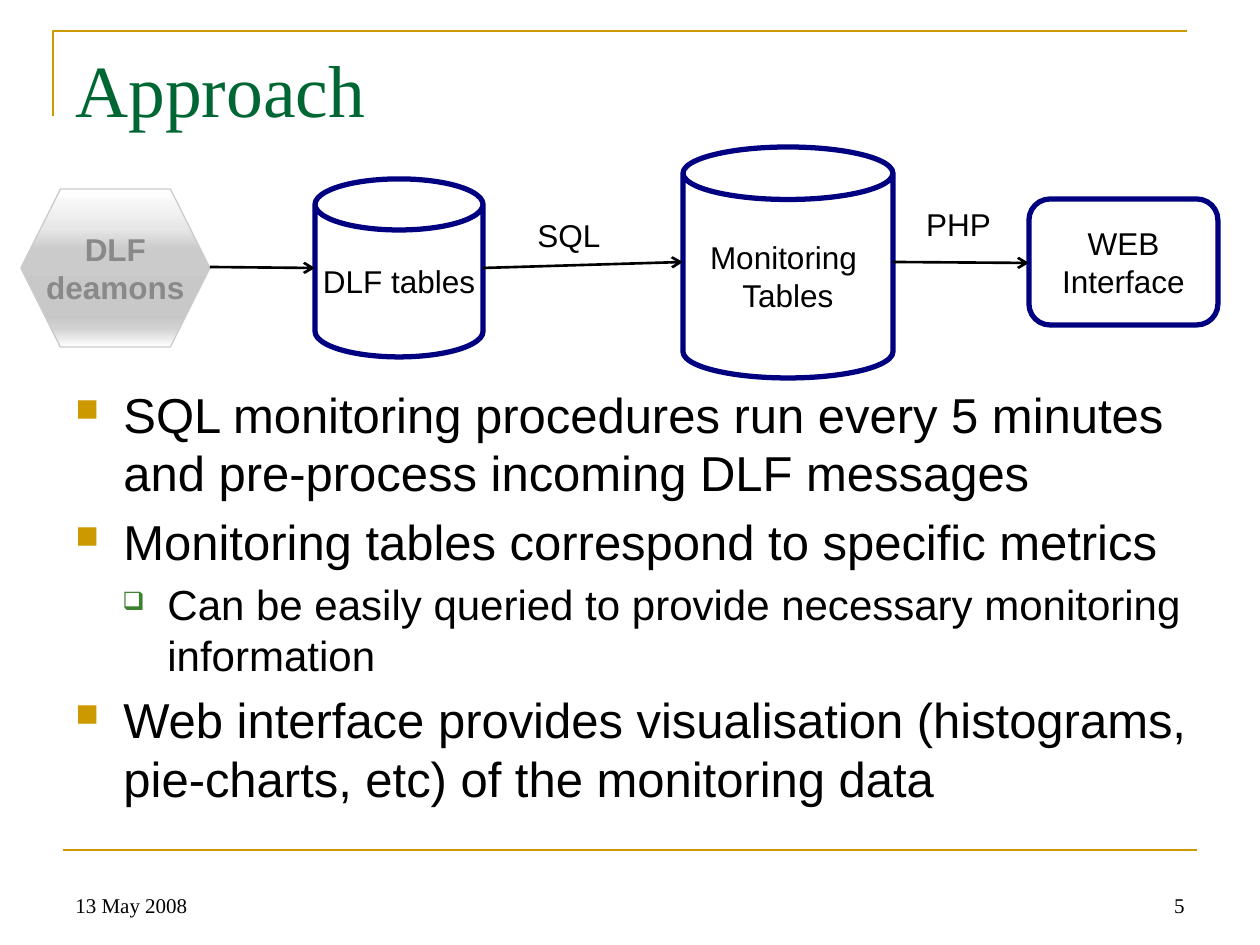
from lxml import etree
from pptx import Presentation
from pptx.dml.color import RGBColor
from pptx.enum.shapes import MSO_CONNECTOR, MSO_SHAPE
from pptx.enum.text import MSO_ANCHOR, PP_ALIGN
from pptx.oxml.ns import qn
from pptx.util import Pt

LEFT, CENTER, RIGHT = PP_ALIGN.LEFT, PP_ALIGN.CENTER, PP_ALIGN.RIGHT
TOP, MIDDLE, BOTTOM = MSO_ANCHOR.TOP, MSO_ANCHOR.MIDDLE, MSO_ANCHOR.BOTTOM
CAN, HEXAGON, ROUNDED = MSO_SHAPE.CAN, MSO_SHAPE.HEXAGON, MSO_SHAPE.ROUNDED_RECTANGLE
STRAIGHT = MSO_CONNECTOR.STRAIGHT

SCALE = 914400 / 126
GOLD, GREEN, NAVY, BLACK, SILVER = "CC9900", "006633", "000080", "000000", "CCCCCC"
SANS, SERIF = "Arial", "Times New Roman"
LABEL = {"size": Pt(18), "name": SANS}
FOOTER = {"size": Pt(12), "name": SERIF}
LEVELS = [
    {"size": 28, "left": 48, "hang": 48, "mark": "■", "color": GOLD, "percent": 65},
    {"size": 24, "left": 92, "hang": 45, "mark": "❑", "color": "3B812F", "percent": 60},
]
STEEL = [(0, "FFFFFF"), (25, "E7E7E7"), (38, "CBCBCB"), (55, "C8C8C8"),
         (80, "C6C6C6"), (88, "D1D1D1"), (100, "FFFFFF")]
BULLETS = [
    (0, "SQL monitoring procedures run every 5 minutes and pre-process incoming DLF messages"),
    (0, "Monitoring tables correspond to specific metrics"),
    (1, "Can be easily queried to provide necessary monitoring information"),
    (0, "Web interface provides visualisation (histograms, pie-charts, etc) of the monitoring data"),
]


def px(value):
    return round(value * SCALE)


def rgb(value):
    return RGBColor.from_string(value)


def child(parent, tag, **attributes):
    return etree.SubElement(parent, qn(tag), attributes)


class SlideBuilder:
    def __init__(self, deck):
        self.page = deck.slides.add_slide(deck.slide_layouts[6])
        self.shapes = self.page.shapes

    def outline(self, shape, color, width):
        shape.line.color.rgb = rgb(color)
        shape.line.width = Pt(width)

    def add_span(self, para, text, style, color=BLACK):
        span = para.add_run()
        span.text = text
        for name, value in style.items():
            setattr(span.font, name, value)
        span.font.color.rgb = rgb(color)

    def fill_text(self, shape, lines, style, color, align, anchor, wrap, before=0):
        frame = shape.text_frame
        frame.word_wrap = wrap
        frame.vertical_anchor = anchor
        for index, line in enumerate(lines):
            para = frame.add_paragraph() if index else frame.paragraphs[0]
            para.alignment = align
            para.space_before = Pt(before)
            self.add_span(para, line, style, color)

    def text(self, box, line, style, color=BLACK, align=LEFT, anchor=TOP, wrap=True, before=0):
        shape = self.shapes.add_textbox(*map(px, box))
        self.fill_text(shape, [line], style, color, align, anchor, wrap, before)

    def node(self, kind, box, lines, adjust, color=BLACK, line=NAVY, width=3, bold=False, stops=None):
        shape = self.shapes.add_shape(kind, *map(px, box))
        shape.shadow.inherit = False
        if adjust is not None:
            shape.adjustments[0] = adjust
        if stops:
            self.gradient(shape, stops)
        else:
            shape.fill.background()
        self.outline(shape, line, width)
        self.fill_text(shape, lines, {**LABEL, "bold": bold}, color, CENTER, MIDDLE, False)

    def gradient(self, shape, stops):
        shape.fill.gradient()
        shape.fill.gradient_angle = 270
        stop_list = shape.element.spPr.find(".//" + qn("a:gsLst"))
        for stop in list(stop_list):
            stop_list.remove(stop)
        for position, color in stops:
            stop = child(stop_list, "a:gs", pos=str(position * 1000))
            child(stop, "a:srgbClr", val=color)

    def line(self, start, end, color=BLACK, arrow=False):
        connector = self.shapes.add_connector(STRAIGHT, *map(px, start + end))
        self.outline(connector, color, 1.5)
        properties = connector.element.spPr
        if arrow:
            child(properties.find(qn("a:ln")), "a:tailEnd", type="arrow")
        child(properties, "a:effectLst")

    def open_outline(self, points, color):
        corners = [(px(x), px(y)) for x, y in points]
        builder = self.shapes.build_freeform(*corners[0])
        builder.add_line_segments(corners[1:], close=False)
        shape = builder.convert_to_shape()
        shape.shadow.inherit = False
        shape.fill.background()
        self.outline(shape, color, 1.5)

    def bullets(self, box, items):
        frame = self.shapes.add_textbox(*map(px, box)).text_frame
        frame.word_wrap = True
        for index, (depth, text) in enumerate(items):
            level = LEVELS[depth]
            para = frame.add_paragraph() if index else frame.paragraphs[0]
            para.level = depth
            para.space_before = Pt(level["size"] * 0.2)
            properties = para._p.get_or_add_pPr()
            properties.set("marL", str(px(level["left"])))
            properties.set("indent", str(-px(level["hang"])))
            child(child(properties, "a:buClr"), "a:srgbClr", val=level["color"])
            child(properties, "a:buSzPct", val=str(level["percent"] * 1000))
            child(properties, "a:buChar", char=level["mark"])
            self.add_span(para, text, {"size": Pt(level["size"]), "name": SANS})


def main():
    deck = Presentation()
    deck.slide_width, deck.slide_height = px(1260), px(945)
    slide = SlideBuilder(deck)

    slide.open_outline([(53, 116), (53, 31), (1187, 31)], GOLD)
    slide.line((63, 850), (1197, 850), GOLD)
    slide.text((63, 38, 1134, 157), "Approach", {"size": Pt(42), "name": SERIF}, GREEN)
    slide.bullets((63, 378, 1165, 466), BULLETS)
    slide.text((63, 861, 294, 63), "13 May 2008", FOOTER, anchor=BOTTOM)
    slide.text((903, 861, 294, 63), "5", FOOTER, align=RIGHT, anchor=BOTTOM)

    slide.node(CAN, (683, 147, 210, 231), ["Monitoring ", "Tables"], 0.25)
    slide.node(CAN, (315, 179, 168, 178), ["DLF tables"], 0.304)
    slide.node(ROUNDED, (1029, 199, 189, 126), ["WEB", "Interface"], 0.167)
    slide.node(HEXAGON, (21, 189, 189, 158), ["DLF", "deamons"], None,
               color="898989", line=SILVER, width=0.75, bold=True, stops=STEEL)

    for box, label in [((913, 199, 91, 50), "PHP"), ((525, 210, 88, 50), "SQL")]:
        slide.text(box, label, LABEL, align=CENTER, anchor=MIDDLE, wrap=False, before=9)
    for start, end in [((210, 267), (315, 268)), ((483, 268), (683, 262)), ((893, 262), (1029, 263))]:
        slide.line(start, end, arrow=True)

    deck.save("out.pptx")


if __name__ == "__main__":
    main()
